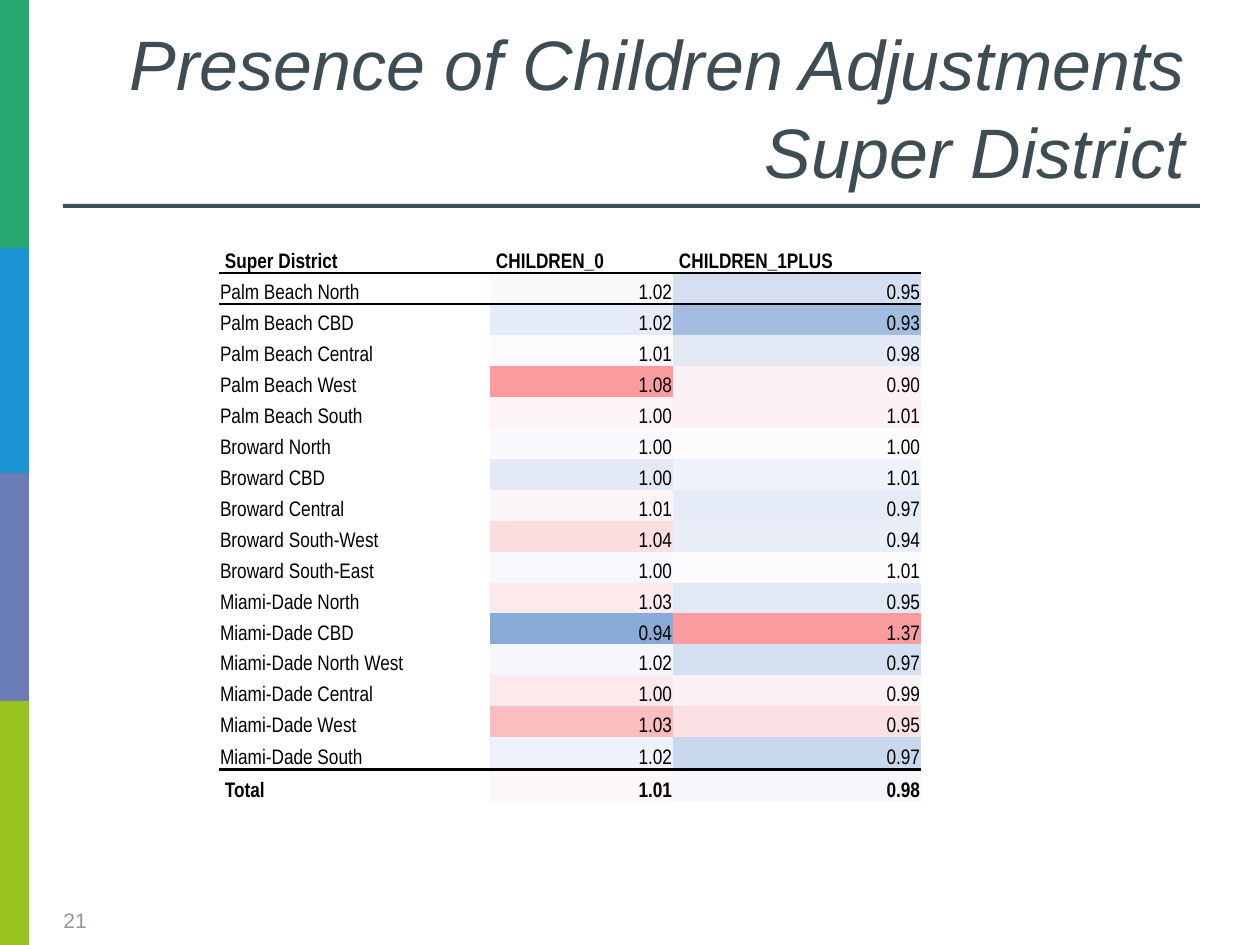
import pptx
import pptx.dml.color
import pptx.enum.shapes
import pptx.enum.text
import pptx.oxml
import pptx.oxml.ns
import pptx.util

PX = 914400 / 126
COLORS = {
    "green": "26A871", "blue": "1C93D2", "purple": "6A7CB8", "lime": "97C31C",
    "rule": "3F4D55", "title": "3E4D54", "number": "939799", "black": "000000",
}
TITLE = "Presence of Children Adjustments\vSuper District"
SLIDE_NUMBER = "21"
SIDEBAR = [("green", 248), ("blue", 225), ("purple", 228), ("lime", 244)]
HEADER = ["Super District", "CHILDREN_0", "CHILDREN_1PLUS"]
DISTRICTS = [
    ("Palm Beach North", ("1.02", "FCF9FC"), ("0.95", "D4E0F1")),
    ("Palm Beach CBD", ("1.02", "E6ECF7"), ("0.93", "A2BDDF")),
    ("Palm Beach Central", ("1.01", "FCFAFD"), ("0.98", "E3EAF6")),
    ("Palm Beach West", ("1.08", "FA9C9E"), ("0.90", "FCF1F4")),
    ("Palm Beach South", ("1.00", "FCF4F7"), ("1.01", "FCF1F3")),
    ("Broward North", ("1.00", "FAFAFE"), ("1.00", "FCFBFE")),
    ("Broward CBD", ("1.00", "E3EAF6"), ("1.01", "EEF2FA")),
    ("Broward Central", ("1.01", "FCF5F8"), ("0.97", "E5ECF7")),
    ("Broward South-West", ("1.04", "FCDDE0"), ("0.94", "E9EEF8")),
    ("Broward South-East", ("1.00", "F6F8FD"), ("1.01", "FCFCFF")),
    ("Miami-Dade North", ("1.03", "FCEAEC"), ("0.95", "E1E9F5")),
    ("Miami-Dade CBD", ("0.94", "88AAD6"), ("1.37", "FA9B9D")),
    ("Miami-Dade North West", ("1.02", "F5F7FC"), ("0.97", "D4E0F1")),
    ("Miami-Dade Central", ("1.00", "FCE9EC"), ("0.99", "FCF1F4")),
    ("Miami-Dade West", ("1.03", "FBBDBF"), ("0.95", "FCE1E4")),
    ("Miami-Dade South", ("1.02", "EFF2FA"), ("0.97", "C9D8ED")),
]
TOTAL = ("Total", ("1.01", "FCF7FA"), ("0.98", "F5F7FC"))
COLUMN_WIDTHS = [271, 183, 248]
ROW_HEIGHTS = [32] + [31] * (len(DISTRICTS) - 1) + [32, 33]
NO_STYLE = "{2D5ABB26-0587-4C30-8999-92F81FD0307C}"
RIGHT = pptx.enum.text.PP_ALIGN.RIGHT
BOTTOM = pptx.enum.text.MSO_ANCHOR.BOTTOM
MIDDLE = pptx.enum.text.MSO_ANCHOR.MIDDLE


def px(length):
    return pptx.util.Emu(round(length * PX))


def rgb(value):
    return pptx.dml.color.RGBColor.from_string(value)


def assign(target, values):
    for name, value in values.items():
        setattr(target, name, value)


def write(paragraph, text, color, size, font="Arial", **formats):
    paragraph.text = text
    for run in paragraph.runs:
        assign(run.font, {"name": font, "size": pptx.util.Pt(size), **formats})
        run.font.color.rgb = rgb(COLORS[color])


def add_bar(slide, box, color):
    shape = slide.shapes.add_shape(
        pptx.enum.shapes.MSO_SHAPE.RECTANGLE, *map(px, box))
    shape.shadow.inherit = False
    shape.fill.solid()
    shape.fill.fore_color.rgb = rgb(COLORS[color])
    shape.line.fill.background()


def add_text(slide, box, anchor, *content, **formats):
    frame = slide.shapes.add_textbox(*map(px, box)).text_frame
    assign(frame, {"word_wrap": True, "vertical_anchor": anchor})
    write(frame.paragraphs[0], *content, **formats)
    return frame.paragraphs[0]


def add_border(cell, side, points):
    cell._tc.get_or_add_tcPr().append(pptx.oxml.parse_xml(
        f'<a:{side} {pptx.oxml.ns.nsdecls("a")} w="{pptx.util.Pt(points)}">'
        f'<a:solidFill><a:srgbClr val="{COLORS["black"]}"/></a:solidFill></a:{side}>'))


def fill_cell(cell, text, color, bold, numeric):
    indent = 6 if bold and not numeric else 1
    assign(cell, {"margin_left": px(indent), "margin_right": px(1),
                  "margin_top": px(1), "margin_bottom": 0, "vertical_anchor": BOTTOM})
    if color:
        cell.fill.solid()
        cell.fill.fore_color.rgb = rgb(color)
    else:
        cell.fill.background()
    paragraph = cell.text_frame.paragraphs[0]
    write(paragraph, text, "black", 12, "Arial Narrow", bold=bold)
    if numeric:
        paragraph.alignment = RIGHT


def add_district_table(slide):
    rows = [[(text, None) for text in HEADER]]
    rows += [[(name, None), *values] for name, *values in DISTRICTS + [TOTAL]]
    last = len(rows) - 1
    borders = {0: ("lnB", 1), 1: ("lnT", 1), last - 1: ("lnB", 2), last: ("lnT", 2)}
    box = (219, 241, sum(COLUMN_WIDTHS), sum(ROW_HEIGHTS))
    table = slide.shapes.add_table(len(rows), len(HEADER), *map(px, box)).table
    assign(table, {"first_row": False, "horz_banding": False})
    table._tbl.tblPr.find(pptx.oxml.ns.qn("a:tableStyleId")).text = NO_STYLE
    for column, width in zip(table.columns, COLUMN_WIDTHS):
        column.width = px(width)
    for index, (row, height) in enumerate(zip(rows, ROW_HEIGHTS)):
        table.rows[index].height = px(height)
        for position, (text, color) in enumerate(row):
            cell = table.cell(index, position)
            if index in borders:
                add_border(cell, *borders[index])
            fill_cell(cell, text, color, index in (0, last), index > 0 and position > 0)


def main():
    presentation = pptx.Presentation()
    assign(presentation, {"slide_width": px(1260), "slide_height": px(945)})
    slide = presentation.slides.add_slide(presentation.slide_layouts[6])
    top = 0
    for color, height in SIDEBAR:
        add_bar(slide, (0, top, 29, height), color)
        top += height
    add_bar(slide, (63, 204, 1137, 4), "rule")
    title = add_text(slide, (63, -1, 1134, 200), BOTTOM, TITLE, "title", 40, italic=True)
    assign(title, {"alignment": RIGHT, "line_spacing": 1.05})
    add_text(slide, (51, 895, 92, 50), MIDDLE, SLIDE_NUMBER, "number", 12)
    add_district_table(slide)
    presentation.save("out.pptx")


if __name__ == "__main__":
    main()
